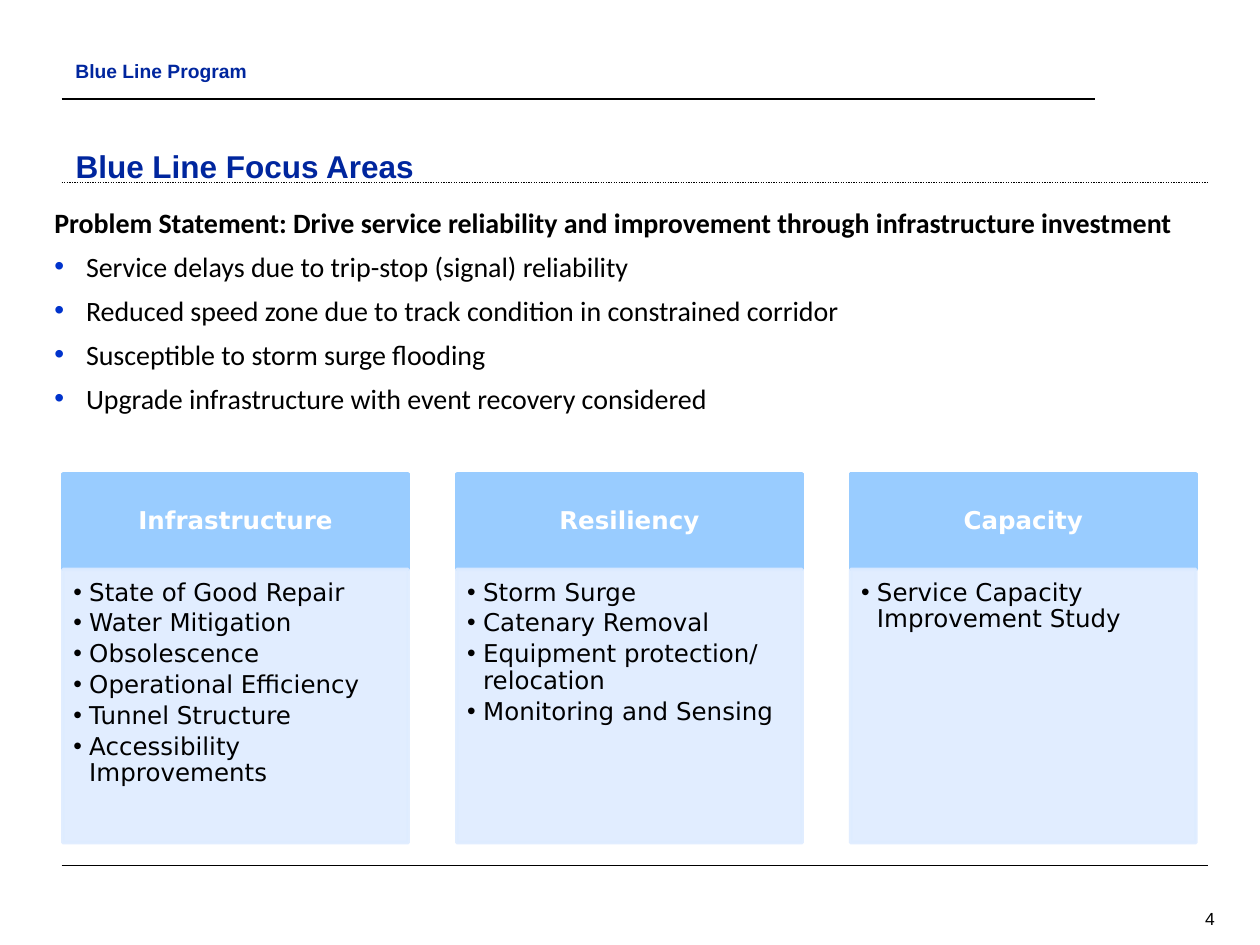
from lxml import etree
from pptx import Presentation
from pptx.dml.color import RGBColor
from pptx.enum import dml, shapes, text
from pptx.oxml import ns
from pptx.util import Cm, Pt

COLORS = {
    "navy": "00269E",
    "bullet": "0033CC",
    "header": "99CCFF",
    "panel": "DEECFF",
    "black": "000000",
    "white": "FFFFFF",
}
ALIGN = text.PP_ALIGN
ANCHOR = text.MSO_ANCHOR


def rgb(name):
    return RGBColor.from_string(COLORS[name])


def add_bullet(paragraph, indent, color):
    """Give a paragraph a hanging round bullet, or none when indent is 0."""
    props = paragraph._p.get_or_add_pPr()
    props.set("marL", str(Cm(indent)))
    props.set("indent", str(-Cm(indent)))
    if not indent:
        etree.SubElement(props, ns.qn("a:buNone"))
        return
    bullet_color = etree.SubElement(props, ns.qn("a:buClr"))
    etree.SubElement(bullet_color, ns.qn("a:srgbClr"), val=COLORS[color])
    etree.SubElement(props, ns.qn("a:buFont"), typeface="Arial")
    etree.SubElement(props, ns.qn("a:buChar"), char="•")


def write(frame, words, size=14, font="Arial", color="black", bold=False,
          align=ALIGN.LEFT, indent=0, bullet="black", before=0, after=0,
          spacing=1.0, first=True):
    """Write one paragraph; first=False adds it below the earlier ones."""
    paragraph = frame.paragraphs[0] if first else frame.add_paragraph()
    add_bullet(paragraph, indent, bullet)
    paragraph.alignment = align
    paragraph.line_spacing = spacing
    paragraph.space_before = Pt(0 if first else before)
    paragraph.space_after = Pt(after)
    run = paragraph.add_run()
    run.text = words
    run.font.size, run.font.name, run.font.bold = Pt(size), font, bold
    run.font.color.rgb = rgb(color)


class FocusSlide:
    heading_font = "Arial"
    body_font = "Calibri"
    card_font = "DejaVu Sans"

    def __init__(self, deck):
        self.slide = deck.slides.add_slide(deck.slide_layouts[1])

    def rule(self, right, y, width, dash=None):
        line = self.slide.shapes.add_connector(
            shapes.MSO_CONNECTOR.STRAIGHT, Cm(1.24), Cm(y), Cm(right), Cm(y))
        line.line.color.rgb = rgb("black")
        line.line.width = Pt(width)
        if dash:
            line.line.dash_style = dash
        etree.SubElement(line._element.spPr, ns.qn("a:effectLst"))

    def frame(self, shape, box, anchor=ANCHOR.TOP):
        shape.left, shape.top, shape.width, shape.height = map(Cm, box)
        frame = shape.text_frame
        frame.word_wrap = True
        frame.auto_size = text.MSO_AUTO_SIZE.NONE
        frame.vertical_anchor = anchor
        return frame

    def title(self, words, box):
        write(self.frame(self.slide.shapes.title, box), words, size=18,
              font=self.heading_font, color="navy", bold=True)

    def label(self, words, box, anchor=ANCHOR.TOP, **style):
        label = self.slide.shapes.add_textbox(*map(Cm, box))
        write(self.frame(label, box, anchor), words,
              font=self.heading_font, **style)

    def statement(self, lead, points, box):
        frame = self.frame(self.slide.placeholders[1], box)
        write(frame, lead, size=16, font=self.body_font, bold=True)
        for point in points:
            write(frame, point, size=16, font=self.body_font, indent=0.64,
                  bullet="bullet", before=6, first=False)

    def block(self, box, color, margins, anchor, opacity=100):
        block = self.slide.shapes.add_shape(
            shapes.MSO_SHAPE.RECTANGLE, *map(Cm, box))
        block.shadow.inherit = False
        block.fill.solid()
        block.fill.fore_color.rgb = rgb(color)
        block.line.color.rgb = rgb(color)
        block.line.width = Pt(2)
        if opacity < 100:
            for tint in block._element.spPr.iter(ns.qn("a:srgbClr")):
                etree.SubElement(tint, ns.qn("a:alpha"),
                                 val=str(opacity * 1000))
        frame = self.frame(block, box, anchor)
        (frame.margin_left, frame.margin_top,
         frame.margin_right, frame.margin_bottom) = map(Cm, margins)
        return frame

    def card(self, area, topics, left, top, width, header_height, list_height):
        header = self.block((left, top, width, header_height), "header",
                            (0.28, 0.16, 0.28, 0.16), ANCHOR.MIDDLE)
        write(header, area, font=self.card_font, color="white", bold=True,
              align=ALIGN.CENTER, spacing=0.9)
        panel = self.block((left, top + header_height, width, list_height),
                           "panel", (0.21, 0.21, 0.28, 0.32), ANCHOR.TOP, 90)
        for number, topic in enumerate(topics):
            write(panel, topic, font=self.card_font, indent=0.32, after=2.5,
                  spacing=0.9, first=number == 0)


def main():
    deck = Presentation()
    deck.slide_width, deck.slide_height = Cm(25.4), Cm(19.05)
    page = FocusSlide(deck)

    # Page frame
    page.rule(right=22.07, y=2, width=1)
    page.rule(right=24.36, y=3.68, width=0.75,
              dash=dml.MSO_LINE.ROUND_DOT)
    page.rule(right=24.36, y=17.45, width=0.75)
    page.label("4", (22.63, 18.19, 2.11, 0.64), ANCHOR.MIDDLE, size=10,
               align=ALIGN.RIGHT)

    # Headings
    page.title("Blue Line Focus Areas", (1.27, 2.84, 20.32, 0.97))
    page.label("Blue Line Program", (1.27, 1.07, 19.89, 0.74), size=11,
               color="navy", bold=True)

    # Problem statement
    page.statement(
        "Problem Statement: Drive service reliability and improvement "
        "through infrastructure investment",
        ["Service delays due to trip-stop (signal) reliability",
         "Reduced speed zone due to track condition in constrained corridor",
         "Susceptible to storm surge flooding",
         "Upgrade infrastructure with event recovery considered"],
        (0.84, 4.01, 23.5, 5.28))

    # Focus area cards
    focus_areas = {
        "Infrastructure": ["State of Good Repair", "Water Mitigation",
                           "Obsolescence", "Operational Efficiency",
                           "Tunnel Structure", "Accessibility Improvements"],
        "Resiliency": ["Storm Surge", "Catenary Removal",
                       "Equipment protection/ relocation",
                       "Monitoring and Sensing"],
        "Capacity": ["Service Capacity Improvement Study"],
    }
    for column, (area, topics) in enumerate(focus_areas.items()):
        page.card(area, topics, left=1.27 + 7.94 * column, top=9.55,
                  width=6.96, header_height=1.93, list_height=5.51)

    deck.save("out.pptx")


if __name__ == "__main__":
    main()
